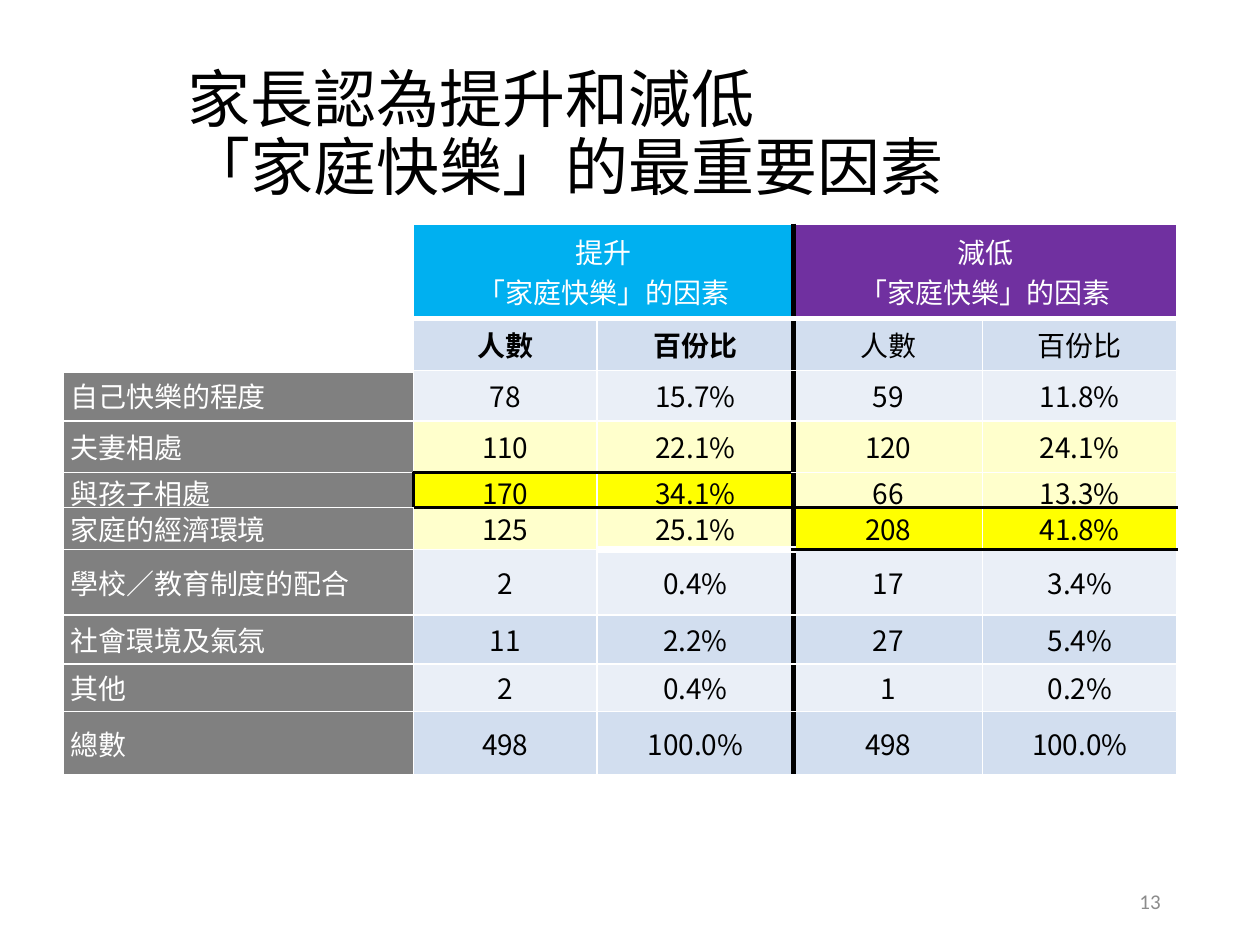
from itertools import product
from lxml.etree import SubElement
from pptx import Presentation
from pptx.dml.color import RGBColor
from pptx.enum.text import MSO_ANCHOR, PP_ALIGN
from pptx.oxml.ns import qn
from pptx.util import Inches, Pt

CJK = "Noto Sans CJK SC"
WHITE, BLACK, GREY = "FFFFFF", "000000", "808080"
CYAN, PURPLE = "00B0F0", "7030A0"
LIGHT, MID, CREAM, YELLOW = "EAEFF7", "D2DEEF", "FFFFCC", "FFFF00"

COLS = [2.78, 1.46, 1.56, 1.5, 1.54]
ROWS = [0.75, 0.41, 0.4, 0.41, 0.28, 0.33, 0.52, 0.39, 0.38, 0.5]
HEADINGS = [(1, "提升", CYAN), (3, "減低", PURPLE)]
HEADING_TAIL = "「家庭快樂」的因素"
BODY = [
    ("", "人數", "百份比", "人數", "百份比"),
    ("自己快樂的程度", "78", "15.7%", "59", "11.8%"),
    ("夫妻相處", "110", "22.1%", "120", "24.1%"),
    ("與孩子相處", "170", "34.1%", "66", "13.3%"),
    ("家庭的經濟環境", "125", "25.1%", "208", "41.8%"),
    ("學校／教育制度的配合", "2", "0.4%", "17", "3.4%"),
    ("社會環境及氣氛", "11", "2.2%", "27", "5.4%"),
    ("其他", "2", "0.4%", "1", "0.2%"),
    ("總數", "498", "100.0%", "498", "100.0%"),
]
TOP_RESULTS = {(4, 1), (4, 2), (5, 3), (5, 4)}

THIN, RULE, DIVIDER = (WHITE, 1), (BLACK, 2.25), (BLACK, 3)
LEFT_EDGES = {(row, 3): DIVIDER for row in range(len(ROWS))} | {(4, 1): RULE}
TOP_EDGES = {(row, col): RULE for row, cols in [(4, (1, 2)), (5, (1, 2, 3, 4)), (6, (3, 4))]
             for col in cols} | {(6, 2): (WHITE, 4.5)}


def rgb(value):
    return RGBColor.from_string(value)


def add_run(p, text, size, color, font=CJK, bold=False):
    r = p.add_run()
    r.text = text
    r.font.size = Pt(size)
    r.font.bold = bold
    r.font.color.rgb = rgb(color)
    r.font.name = font
    SubElement(r.font._element, qn("a:ea"), typeface=font)


def add_text_frame(s, box):
    tf = s.shapes.add_textbox(*map(Inches, box)).text_frame
    tf.word_wrap = True
    tf.vertical_anchor = MSO_ANCHOR.MIDDLE
    return tf


def add_title(s, box):
    p = add_text_frame(s, box).paragraphs[0]
    p.line_spacing = 0.9
    add_run(p, "家長認為提升和減低", 36, BLACK)
    p.add_line_break()
    add_run(p, "「家庭快樂」的最重要因素", 36, BLACK)


def add_page_number(s, box):
    p = add_text_frame(s, box).paragraphs[0]
    p.alignment = PP_ALIGN.RIGHT
    add_run(p, "13", 12, "8C8C8C", "Calibri")


def set_borders(cell, row, col, span):
    bottom = (WHITE, 3) if row == 0 else TOP_EDGES.get((row + 1, col), THIN)
    edges = {
        "a:lnL": LEFT_EDGES.get((row, col), THIN),
        "a:lnR": LEFT_EDGES.get((row, col + span), THIN),
        "a:lnT": TOP_EDGES.get((row, col), THIN),
        "a:lnB": bottom,
    }
    tcPr = cell._tc.get_or_add_tcPr()
    for tag, (color, width) in edges.items():
        ln = SubElement(tcPr, qn(tag), w=str(Pt(width)))
        fill = SubElement(ln, qn("a:solidFill"))
        SubElement(fill, qn("a:srgbClr"), val=color)


def fill_cell(cell, lines, fill, color, inset, align, bold=False):
    cell.vertical_anchor = MSO_ANCHOR.MIDDLE
    cell.margin_left = cell.margin_right = Inches(inset)
    cell.margin_top = cell.margin_bottom = 0
    cell.fill.solid()
    cell.fill.fore_color.rgb = rgb(fill)
    tf = cell.text_frame
    for i, line in enumerate(lines):
        p = tf.add_paragraph() if i else tf.paragraphs[0]
        p.alignment = align
        add_run(p, line, 16, color, bold=bold)


def body_fill(row, col):
    if col == 0:
        return GREY
    if (row, col) in TOP_RESULTS:
        return YELLOW
    if 3 <= row <= 5:
        return CREAM
    return MID if row % 2 else LIGHT


def add_factor_table(s, box):
    table = s.shapes.add_table(len(ROWS), len(COLS), *map(Inches, box)).table
    table.first_row = table.horz_banding = False
    for column, width in zip(table.columns, COLS):
        column.width = Inches(width)
    for row, height in zip(table.rows, ROWS):
        row.height = Inches(height)

    for row, col in product(range(len(ROWS)), range(len(COLS))):
        span = 2 if row == 0 and col in (1, 3) else 1
        set_borders(table.cell(row, col), row, col, span)

    corner = table.cell(0, 0)
    corner.merge(table.cell(1, 0))
    corner.fill.background()
    for col, label, fill in HEADINGS:
        cell = table.cell(0, col)
        cell.merge(table.cell(0, col + 1))
        fill_cell(cell, [label, HEADING_TAIL], fill, WHITE, 0.06, PP_ALIGN.CENTER)

    for row, values in enumerate(BODY, 1):
        for col, value in enumerate(values):
            if value:
                fill_cell(table.cell(row, col), [value],
                          MID if row == 1 else body_fill(row, col),
                          BLACK if col else WHITE,
                          0.07 if col in (1, 2) else 0.06,
                          PP_ALIGN.CENTER if col else PP_ALIGN.LEFT,
                          bold=row == 1 and col in (1, 2))


def main():
    prs = Presentation()
    prs.slide_width, prs.slide_height = Inches(10), Inches(7.5)
    s = prs.slides.add_slide(prs.slide_layouts[6])
    add_title(s, (1.39, 0.31, 7.93, 1.54))
    add_page_number(s, (7.06, 6.95, 2.25, 0.4))
    add_factor_table(s, (0.5, 1.78, sum(COLS), sum(ROWS)))
    prs.save("out.pptx")


if __name__ == "__main__":
    main()
